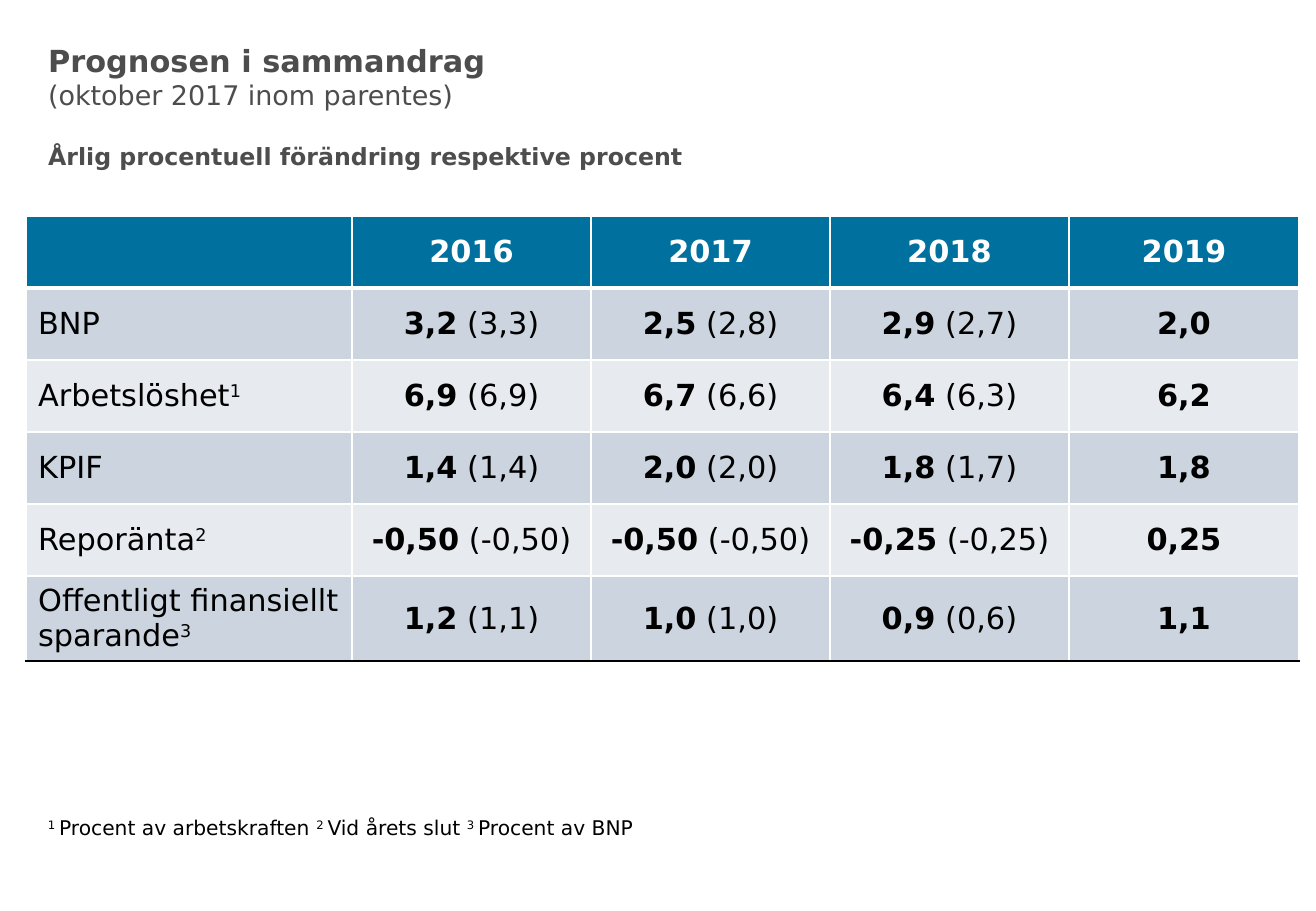
from lxml import etree
from pptx import Presentation
from pptx.dml.color import RGBColor
from pptx.enum.text import MSO_ANCHOR, MSO_AUTO_SIZE, PP_ALIGN
from pptx.oxml.ns import qn
from pptx.util import Emu, Pt

TOP, MIDDLE = MSO_ANCHOR.TOP, MSO_ANCHOR.MIDDLE
LEFT, CENTER = PP_ALIGN.LEFT, PP_ALIGN.CENTER
NO_FIT = MSO_AUTO_SIZE.NONE
SCALE = 914400 / 121.5

WHITE = RGBColor(0xFF, 0xFF, 0xFF)
BLACK = RGBColor(0x00, 0x00, 0x00)
GREY = RGBColor(0x4D, 0x4D, 0x4D)
BLUE = RGBColor(0x00, 0x70, 0x9E)
BAND_DARK = RGBColor(0xCC, 0xD5, 0xDF)
BAND_LIGHT = RGBColor(0xE7, 0xEB, 0xF0)

TITLE_LINES = [
    ("Prognosen i sammandrag", 18, True, 0),
    ("(oktober 2017 inom parentes)", 16, False, 0),
    ("Årlig procentuell förändring respektive procent", 14, True, 18.6),
]
YEARS = ["2016", "2017", "2018", "2019"]
FORECAST = [
    ("BNP", "", ["3,2 (3,3)", "2,5 (2,8)", "2,9 (2,7)", "2,0"]),
    ("Arbetslöshet", "1", ["6,9 (6,9)", "6,7 (6,6)", "6,4 (6,3)", "6,2"]),
    ("KPIF", "", ["1,4 (1,4)", "2,0 (2,0)", "1,8 (1,7)", "1,8"]),
    ("Reporänta", "2", ["-0,50 (-0,50)", "-0,50 (-0,50)", "-0,25 (-0,25)", "0,25"]),
    ("Offentligt finansiellt sparande", "3",
     ["1,2 (1,1)", "1,0 (1,0)", "0,9 (0,6)", "1,1"]),
]
FOOTNOTES = [("1 ", "Procent av arbetskraften "), ("2 ", "Vid årets slut "),
             ("3 ", "Procent av BNP")]
COL_WIDTHS = [326, 239, 239, 239, 230]
ROW_HEIGHTS = [72, 72, 72, 72, 72, 82]


def px(n):
    return Emu(round(n * SCALE))


class Deck:
    font = "DejaVu Sans"

    def __init__(self, width, height):
        self.prs = Presentation()
        self.prs.slide_width, self.prs.slide_height = px(width), px(height)
        self.s = self.prs.slides.add_slide(self.prs.slide_layouts[5])

    def style(self, p, size, color, bold=None, align=LEFT):
        p.alignment = align
        p.font.name, p.font.size = self.font, Pt(size)
        p.font.color.rgb = color
        if bold is not None:
            p.font.bold = bold

    def run(self, p, text, bold=None, raised=False):
        r = p.add_run()
        r.text = text
        if bold is not None:
            r.font.bold = bold
        if raised:
            r._r.get_or_add_rPr().set("baseline", "30000")

    def title(self, x, y, w, h, lines):
        sp = self.s.shapes.title
        sp.left, sp.top, sp.width, sp.height = px(x), px(y), px(w), px(h)
        tf = sp.text_frame
        tf.auto_size, tf.vertical_anchor, tf.word_wrap = NO_FIT, TOP, True
        for i, (text, size, bold, before) in enumerate(lines):
            p = tf.add_paragraph() if i else tf.paragraphs[0]
            self.style(p, size, GREY, bold)
            if before:
                p.space_before = Pt(before)
            self.run(p, text)

    def footnotes(self, x, y, w, h, notes):
        tf = self.s.shapes.add_textbox(px(x), px(y), px(w), px(h)).text_frame
        tf.word_wrap = True
        p = tf.paragraphs[0]
        self.style(p, 12, BLACK)
        for mark, text in notes:
            self.run(p, mark, raised=True)
            self.run(p, text)

    def table(self, x, y, widths, heights):
        frame = self.s.shapes.add_table(len(heights), len(widths), px(x), px(y),
                                        px(sum(widths)), px(sum(heights)))
        for col, w in zip(frame.table.columns, widths):
            col.width = px(w)
        for row, h in zip(frame.table.rows, heights):
            row.height = px(h)
        return frame.table

    def borders(self, cell, top, bottom, bottom_color):
        sides = [("L", 1, WHITE), ("R", 1, WHITE), ("T", top, WHITE),
                 ("B", bottom, bottom_color)]
        tcPr = cell._tc.get_or_add_tcPr()
        for i, (side, width, color) in enumerate(sides):
            ln = etree.Element(qn(f"a:ln{side}"), w=str(Pt(width)))
            fill = etree.SubElement(ln, qn("a:solidFill"))
            etree.SubElement(fill, qn("a:srgbClr"), val=str(color))
            tcPr.insert(i, ln)

    def cell(self, cell, runs, fill, color=BLACK, align=CENTER,
             top=1, bottom=1, bottom_color=WHITE):
        cell.fill.solid()
        cell.fill.fore_color.rgb = fill
        cell.vertical_anchor = MIDDLE
        self.borders(cell, top, bottom, bottom_color)
        p = cell.text_frame.paragraphs[0]
        self.style(p, 18, color, align=align)
        for text, bold, raised in runs:
            if text:
                self.run(p, text, bold, raised)


def main():
    deck = Deck(1316, 911)
    deck.title(36, 36, 1215, 94, TITLE_LINES)
    deck.footnotes(36, 809, 1158, 83, FOOTNOTES)

    table = deck.table(26, 216, COL_WIDTHS, ROW_HEIGHTS)
    for c, year in enumerate([""] + YEARS):
        deck.cell(table.cell(0, c), [(year, True, False)], BLUE, WHITE, bottom=3)
    for r, (label, mark, values) in enumerate(FORECAST, 1):
        look = {"fill": BAND_DARK if r % 2 else BAND_LIGHT,
                "top": 3 if r == 1 else 1,
                "bottom_color": BLACK if r == len(FORECAST) else WHITE}
        deck.cell(table.cell(r, 0), [(label, False, False), (mark, False, True)],
                  align=LEFT, **look)
        for c, value in enumerate(values, 1):
            current, gap, previous = value.partition(" ")
            deck.cell(table.cell(r, c),
                      [(current, True, False), (gap + previous, False, False)], **look)

    deck.prs.save("out.pptx")


if __name__ == "__main__":
    main()
